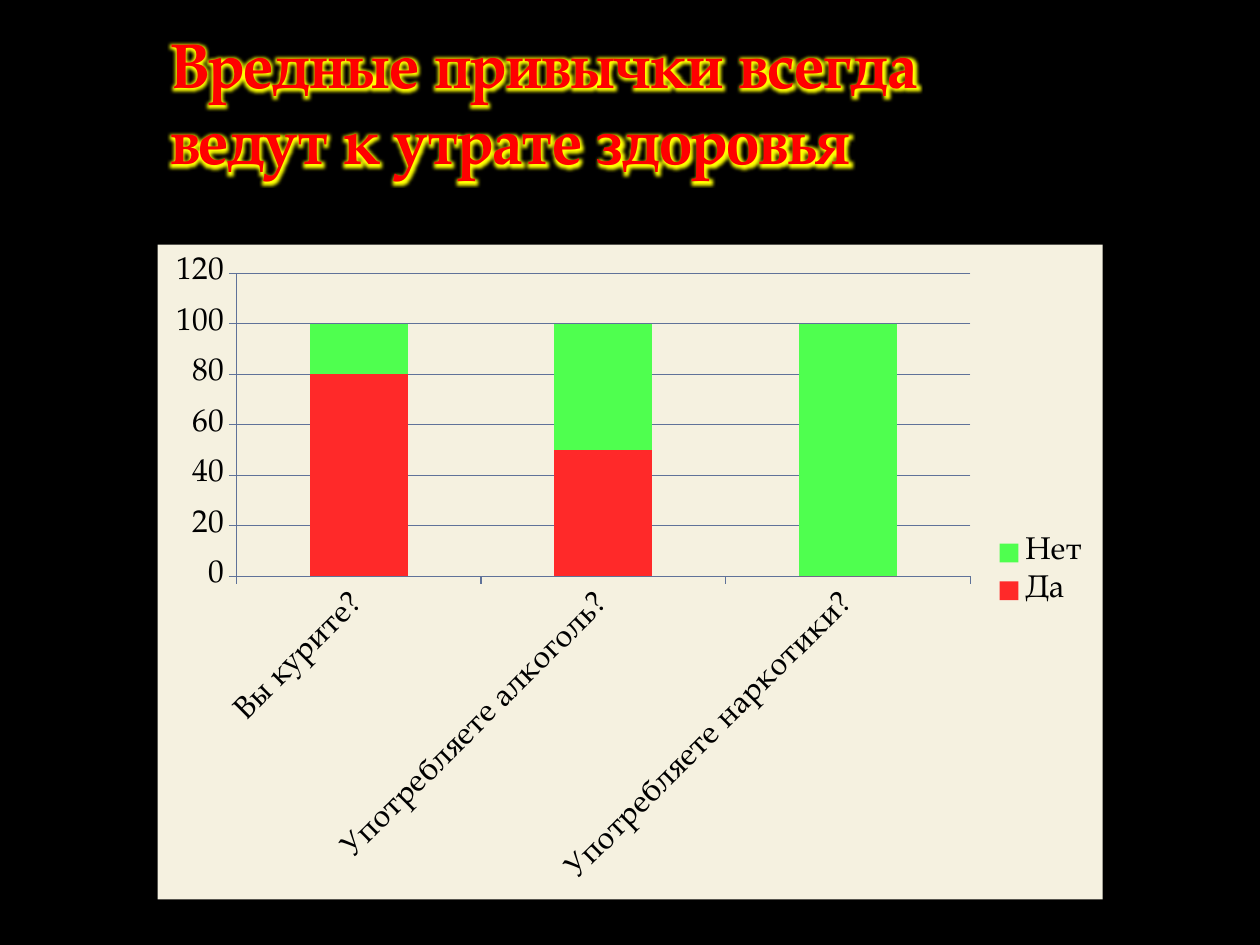
from lxml.etree import fromstring
from pptx import Presentation
from pptx.chart.data import CategoryChartData
from pptx.dml.color import RGBColor
from pptx.enum.chart import XL_CHART_TYPE, XL_LEGEND_POSITION, XL_TICK_MARK
from pptx.enum.text import MSO_AUTO_SIZE
from pptx.util import Cm, Pt

FONT = "TeX Gyre Pagella"
NS = ('xmlns:a="http://schemas.openxmlformats.org/drawingml/2006/main" '
      'xmlns:c="http://schemas.openxmlformats.org/drawingml/2006/chart"')


def rgb(value):
    return RGBColor.from_string(value)


def add_text(s, text, x, y, w, h, size, color, bold=False, glow=None):
    tf = s.shapes.add_textbox(Cm(x), Cm(y), Cm(w), Cm(h)).text_frame
    tf.word_wrap = True
    tf.auto_size = MSO_AUTO_SIZE.SHAPE_TO_FIT_TEXT
    r = tf.paragraphs[0].add_run()
    r.text = text
    r.font.name, r.font.size, r.font.bold = FONT, Pt(size), bold
    r.font.color.rgb = rgb(color)
    if glow:
        r.font.fill._xPr.find("{*}solidFill").addnext(fromstring(
            f'<a:effectLst {NS}><a:glow rad="88900"><a:srgbClr val="{glow}"/>'
            '</a:glow></a:effectLst>'))


prs = Presentation()
prs.slide_width, prs.slide_height = Cm(25.4), Cm(19.05)
s = prs.slides.add_slide(prs.slide_layouts[6])
s.background.fill.solid()
s.background.fill.fore_color.rgb = rgb("000000")

data = CategoryChartData()
data.categories = ["Вы курите?", "Употребляете алкоголь?", "Употребляете наркотики?"]
data.add_series("Да", (80, 50, 0))
data.add_series("Нет", (20, 50, 100))
chart = s.shapes.add_chart(XL_CHART_TYPE.COLUMN_STACKED, Cm(3.18), Cm(4.93),
                           Cm(19.05), Cm(13.2), data).chart
chart.has_title = False
chart.font.name, chart.font.size = FONT, Pt(18)
chart.font.color.rgb = rgb("0070C0")

plot = chart.plots[0]
plot.gap_width, plot.overlap, plot.vary_by_categories = 150, 100, False
for series, color in zip(plot.series, ("FF2929", "4FFF4F")):
    series.format.fill.solid()
    series.format.fill.fore_color.rgb = rgb(color)

chart.has_legend = True
legend = chart.legend
legend.position = XL_LEGEND_POSITION.RIGHT
legend.include_in_layout = False
cat, val = chart.category_axis, chart.value_axis
val.has_major_gridlines = True
for font in (legend.font, cat.tick_labels.font, val.tick_labels.font):
    font.name, font.size = FONT, Pt(18)
    font.color.rgb = rgb("000000")
for axis in (cat, val):
    axis.major_tick_mark = XL_TICK_MARK.OUTSIDE
for line in (cat.format.line, val.format.line, val.major_gridlines.format.line):
    line.width = Pt(0.75)
    line.color.rgb = rgb("5F7299")
cat._element.find("{*}txPr/{*}bodyPr").set("rot", "-2700000")

chart._chartSpace.find("{*}chart").addnext(fromstring(
    f'<c:spPr {NS}><a:solidFill><a:srgbClr val="F5F1E0"/></a:solidFill>'
    '<a:ln><a:noFill/></a:ln></c:spPr>'))

add_text(s, "Вредные привычки всегда ведут к утрате здоровья", 3.18, 0.4, 19.05, 3.33,
         size=36, color="FF0000", bold=True, glow="FFFF00")

prs.save("out.pptx")
